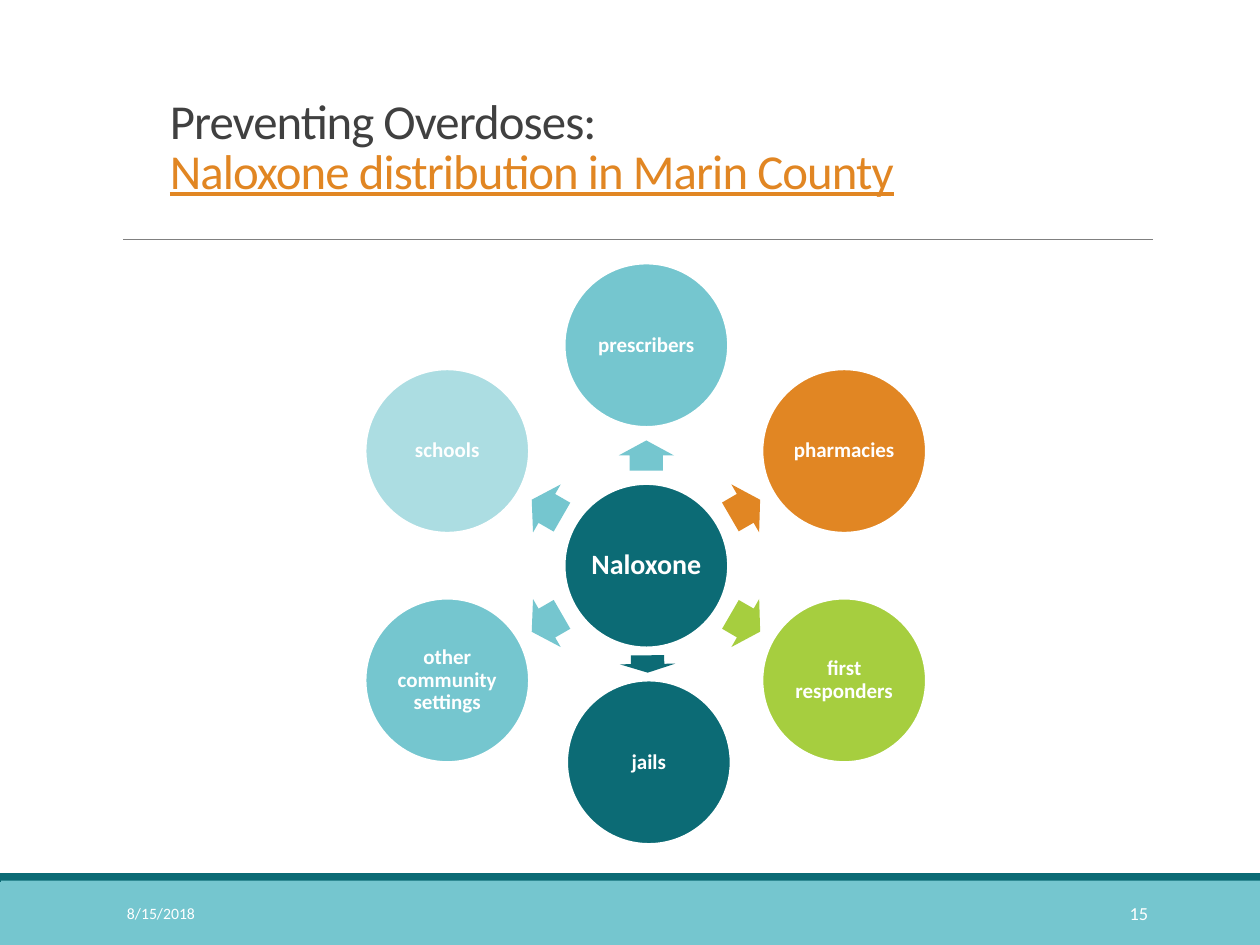
import math
from lxml import etree
from pptx import Presentation
from pptx import util as u
from pptx.dml.color import RGBColor
from pptx.enum import shapes, text
from pptx.oxml.ns import qn

WHITE, TEAL, AQUA, PALE = "FFFFFF", "0C6B75", "75C6CF", "ACDDE2"
ORANGE, GREEN, DARK, GREY = "E18623", "A6CE3F", "404040", "808080"
HUB = (5.13, 4.49)
DIAMETER = 1.3
ARROW_SHARE = 0.53

SATELLITES = [
    ("prescribers", 0, -1.75, AQUA, AQUA),
    ("pharmacies", 1.57, -0.91, ORANGE, ORANGE),
    ("first responders", 1.57, 0.91, GREEN, GREEN),
    ("jails", 0.02, 1.56, TEAL, TEAL),
    ("other community settings", -1.58, 0.91, AQUA, AQUA),
    ("schools", -1.58, -0.91, PALE, AQUA),
]


def color(value):
    return RGBColor.from_string(value)


def add_span(para, content, size=12, fill=WHITE, bold=False, underline=False, spacing=None):
    span = para.add_run()
    span.text = content
    font = span.font
    font.name = "Calibri"
    font.size = u.Pt(size)
    font.bold = bold
    font.underline = underline
    font.color.rgb = color(fill)
    if spacing is not None:
        span._r.get_or_add_rPr().set("spc", str(round(spacing * 100)))


def set_frame(shape, anchor=text.MSO_ANCHOR.MIDDLE, align=text.PP_ALIGN.LEFT,
              line_spacing=1.0, inset=None):
    frame = shape.text_frame
    frame.word_wrap = True
    frame.vertical_anchor = anchor
    if inset is not None:
        frame.margin_left = frame.margin_right = u.Inches(inset)
        frame.margin_top = frame.margin_bottom = u.Inches(inset)
    para = frame.paragraphs[0]
    para.alignment = align
    para.line_spacing = line_spacing
    return para


def add_box(page, left, top, width, height):
    return page.shapes.add_textbox(*map(u.Inches, (left, top, width, height)))


def add_shape(page, kind, left, top, width, height, fill, outline=None):
    shape = page.shapes.add_shape(kind, *map(u.Inches, (left, top, width, height)))
    shape.shadow.inherit = False
    shape.fill.solid()
    shape.fill.fore_color.rgb = color(fill)
    if outline:
        shape.line.color.rgb = color(outline)
        shape.line.width = u.Pt(1.25)
    else:
        shape.line.fill.background()
    return shape


def add_rule(page, left, right, y):
    rule = page.shapes.add_connector(
        shapes.MSO_CONNECTOR.STRAIGHT, *map(u.Inches, (left, y, right, y)))
    rule.line.color.rgb = color(GREY)
    rule.line.width = u.Pt(0.5)
    etree.SubElement(rule._element.spPr, qn("a:effectLst"))


def add_circle(page, label, x, y, fill, size=12):
    circle = add_shape(page, shapes.MSO_SHAPE.OVAL, x - DIAMETER / 2, y - DIAMETER / 2,
                       DIAMETER, DIAMETER, fill, WHITE)
    para = set_frame(circle, align=text.PP_ALIGN.CENTER, line_spacing=0.9, inset=0.02)
    add_span(para, label, size=size, bold=True)


def add_arrow(page, dx, dy, fill):
    length = ARROW_SHARE * (math.hypot(dx, dy) - DIAMETER)
    breadth = 0.44
    arrow = add_shape(page, shapes.MSO_SHAPE.RIGHT_ARROW, HUB[0] + dx / 2 - length / 2,
                      HUB[1] + dy / 2 - breadth / 2, length, breadth, fill)
    arrow.adjustments[0] = 0.6
    arrow.adjustments[1] = 0.5
    arrow.rotation = math.degrees(math.atan2(dy, dx)) % 360


def add_title(page):
    box = add_box(page, 1.25, 0.4, 6.75, 1.81)
    para = set_frame(box, anchor=text.MSO_ANCHOR.BOTTOM, line_spacing=0.85)
    box.text_frame.margin_bottom = u.Inches(0.63)
    add_span(para, "Preventing Overdoses:", size=27.9, fill=DARK, spacing=-0.5)
    para.add_line_break()
    add_span(para, "Naloxone distribution in Marin County", size=27.9, fill=ORANGE,
             underline=True, spacing=-0.5)


def add_footer(page):
    for left, top, height, fill in ((0, 7, 0.5, AQUA), (0, 6.93, 0.07, TEAL),
                                    (0.01, 6.99, 0.5, AQUA)):
        add_shape(page, shapes.MSO_SHAPE.RECTANGLE, left, top, 10, height, fill)
    date = set_frame(add_box(page, 0.91, 7.05, 2.03, 0.4))
    add_span(date, "8/15/2018", size=9)
    number = set_frame(add_box(page, 8.13, 7.05, 1.08, 0.4), align=text.PP_ALIGN.RIGHT)
    add_span(number, "15", size=10.5)


def main():
    deck = Presentation()
    deck.slide_width, deck.slide_height = u.Inches(10), u.Inches(7.5)
    page = deck.slides.add_slide(deck.slide_layouts[6])
    add_footer(page)
    add_rule(page, 0.98, 9.15, 1.9)
    add_title(page)
    add_circle(page, "Naloxone", *HUB, TEAL, size=16)
    for label, dx, dy, fill, arrow_fill in SATELLITES:
        add_arrow(page, dx, dy, arrow_fill)
        add_circle(page, label, HUB[0] + dx, HUB[1] + dy, fill)
    deck.save("out.pptx")


if __name__ == "__main__":
    main()
